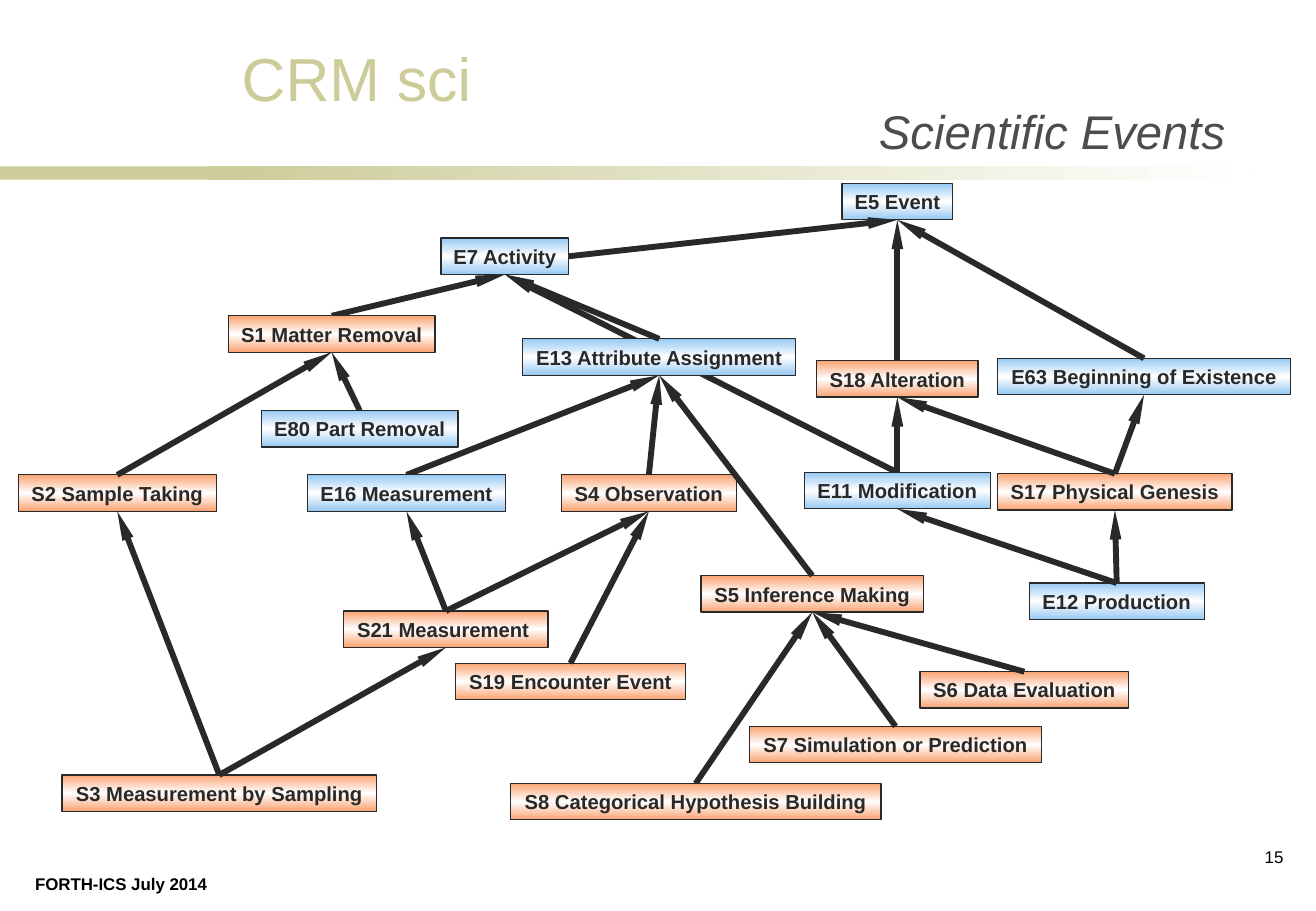
from copy import deepcopy

from lxml import etree
from pptx import Presentation
from pptx.dml.color import RGBColor
from pptx.enum.shapes import MSO_CONNECTOR, MSO_SHAPE
from pptx.enum.text import MSO_ANCHOR, MSO_AUTO_SIZE, PP_ALIGN
from pptx.oxml.ns import qn
from pptx.util import Inches, Pt

LEFT, CENTER, RIGHT = PP_ALIGN.LEFT, PP_ALIGN.CENTER, PP_ALIGN.RIGHT
TOP, MIDDLE, BOTTOM = MSO_ANCHOR.TOP, MSO_ANCHOR.MIDDLE, MSO_ANCHOR.BOTTOM
RECT = MSO_SHAPE.RECTANGLE
STRAIGHT = MSO_CONNECTOR.STRAIGHT
NO_FIT = MSO_AUTO_SIZE.NONE

BLACK = RGBColor(0x00, 0x00, 0x00)
WHITE = RGBColor(0xFF, 0xFF, 0xFF)
INK = RGBColor(0x29, 0x29, 0x29)
GRAY = RGBColor(0x4D, 0x4D, 0x4D)
OLIVE = RGBColor(0xCC, 0xCC, 0x99)
BLUE = RGBColor(0x97, 0xC9, 0xF3)
ORANGE = RGBColor(0xFA, 0xA3, 0x72)

# Connection sites of a rectangle
SITE_TOP, SITE_BOTTOM, SITE_RIGHT = 0, 2, 3
BOX_HEIGHT = 0.3

# Label, left, top, width; the first word is the class code
BOXES = [
    ("E13 Attribute Assignment", 4.3, 2.79, 2.25),
    ("S5 Inference Making", 5.77, 4.74, 1.83),
    ("S4 Observation", 4.62, 3.91, 1.44),
    ("S6 Data Evaluation", 7.57, 5.53, 1.72),
    ("S8 Categorical Hypothesis Building", 4.2, 6.45, 3.05),
    ("S7 Simulation or Prediction", 6.17, 5.98, 2.4),
    ("S1 Matter Removal", 1.88, 2.6, 1.7),
    ("S2 Sample Taking", 0.15, 3.91, 1.63),
    ("E7 Activity", 3.63, 1.96, 1.05),
    ("S19 Encounter Event", 3.75, 5.46, 1.89),
    ("E80 Part Removal", 2.15, 3.38, 1.62),
    ("S3 Measurement by Sampling", 0.51, 6.38, 2.59),
    ("S21 Measurement ", 2.83, 5.03, 1.68),
    ("E16 Measurement", 2.53, 3.91, 1.63),
    ("E5 Event", 6.93, 1.51, 0.91),
    ("S18 Alteration", 6.72, 2.97, 1.33),
    ("S17 Physical Genesis", 8.21, 3.9, 1.93),
    ("E12 Production", 8.47, 4.8, 1.44),
    ("E63 Beginning of Existence", 8.21, 2.95, 2.41),
    ("E11 Modification", 6.62, 3.89, 1.53),
]

# Subclass, superclass; the first group runs behind the boxes
BACK_LINKS = [("E11", "E7"), ("E16", "E13"), ("S8", "S5"), ("E80", "S1"), ("S1", "E7")]
FRONT_LINKS = [
    ("S2", "S1"), ("S7", "S5"), ("S19", "S4"), ("S21", "S4"), ("S4", "E13"),
    ("S5", "E13"), ("S6", "S5"), ("E13", "E7"), ("S3", "S2"), ("S3", "S21"),
    ("S21", "E16"), ("E7", "E5"), ("S18", "E5"), ("S17", "S18"), ("S17", "E63"),
    ("E12", "S17"), ("E11", "S18"), ("E63", "E5"), ("E12", "E11"),
]


def write(shape, text, size=12, color=INK, bold=False, italic=False,
          align=LEFT, anchor=TOP, wrap=False):
    frame = shape.text_frame
    frame.auto_size = NO_FIT
    frame.word_wrap = wrap
    frame.vertical_anchor = anchor
    frame.margin_left = frame.margin_right = Inches(0.1)
    frame.margin_top = frame.margin_bottom = Inches(0.05)
    par = frame.paragraphs[0]
    par.alignment = align
    run = par.add_run()
    run.text = text
    font = run.font
    font.name, font.size = "Arial", Pt(size)
    font.bold, font.italic = bold, italic
    font.color.rgb = color


class Board:
    """Holds the slide, the line style and the boxes by class code."""

    edge, stroke = Pt(0.75), Pt(3.5)

    def __init__(self, slide):
        self.slide = slide
        self.shapes = slide.shapes
        self.boxes = {}

    def title(self, text, left, top, width, height, **style):
        shape = self.shapes.title
        shape.left, shape.top = Inches(left), Inches(top)
        shape.width, shape.height = Inches(width), Inches(height)
        write(shape, text, **style)

    def label(self, text, left, top, width, height, **style):
        shape = self.shapes.add_textbox(
            Inches(left), Inches(top), Inches(width), Inches(height))
        write(shape, text, **style)

    def bar(self, left, top, width, height, colors, angle=0):
        """Add a borderless rectangle with one colour or an even gradient."""
        shape = self.shapes.add_shape(
            RECT, Inches(left), Inches(top), Inches(width), Inches(height))
        shape.shadow.inherit = False
        shape.line.fill.background()
        fill = shape.fill
        if len(colors) == 1:
            fill.solid()
            fill.fore_color.rgb = colors[0]
            return shape
        fill.gradient()
        fill.gradient_angle = angle
        stops = shape.element.spPr.find(".//" + qn("a:gsLst"))
        while len(stops) < len(colors):
            stops.append(deepcopy(stops[-1]))
        for i, (stop, color) in enumerate(zip(fill.gradient_stops, colors)):
            stop.position = i / (len(colors) - 1)
            stop.color.rgb = color
        return shape

    def box(self, text, left, top, width):
        tint = BLUE if text.startswith("E") else ORANGE
        shape = self.bar(left, top, width, BOX_HEIGHT, [tint, WHITE, tint], 90)
        shape.line.color.rgb = INK
        shape.line.width = self.edge
        write(shape, text, bold=True, align=CENTER, anchor=MIDDLE)
        self.boxes[text.split()[0]] = shape

    def link(self, child, parent):
        """Glue an arrow from a subclass box to its superclass box."""
        line = self.shapes.add_connector(STRAIGHT, 0, 0, 0, 0)
        site = SITE_RIGHT if (child, parent) == ("E7", "E5") else SITE_TOP
        line.begin_connect(self.boxes[child], site)
        line.end_connect(self.boxes[parent], SITE_BOTTOM)
        line.line.color.rgb = INK
        line.line.width = self.stroke
        props = line.element.spPr
        etree.SubElement(props.find(qn("a:ln")), qn("a:tailEnd"),
                         type="triangle", w="sm", len="lg")
        etree.SubElement(props, qn("a:effectLst"))
        return line


def main():
    deck = Presentation()
    deck.slide_width, deck.slide_height = Inches(10.83), Inches(7.5)
    board = Board(deck.slides.add_slide(deck.slide_layouts[5]))

    board.bar(0, 1.37, 2.53, 0.11, [OLIVE])
    board.bar(1.72, 1.37, 8.58, 0.11, [OLIVE, WHITE])
    board.label("FORTH-ICS July 2014", 0.19, 7.14, 1.63, 0.27,
                size=10, color=BLACK, bold=True)
    board.label("CRM sci", 1.89, 0.29, 2.11, 0.71, size=36, color=OLIVE)
    board.label("15", 10.17, 6.92, 0.49, 0.42,
                size=10, color=BLACK, align=RIGHT, wrap=True)
    board.title(" Scientific Events ", 2.47, 0.73, 7.82, 0.63, size=28,
                color=GRAY, italic=True, align=RIGHT, anchor=BOTTOM, wrap=True)

    for spec in BOXES:
        board.box(*spec)
    first = next(iter(board.boxes.values())).element
    for pair in BACK_LINKS:
        first.addprevious(board.link(*pair).element)
    for pair in FRONT_LINKS:
        board.link(*pair)

    deck.save("out.pptx")


if __name__ == "__main__":
    main()
